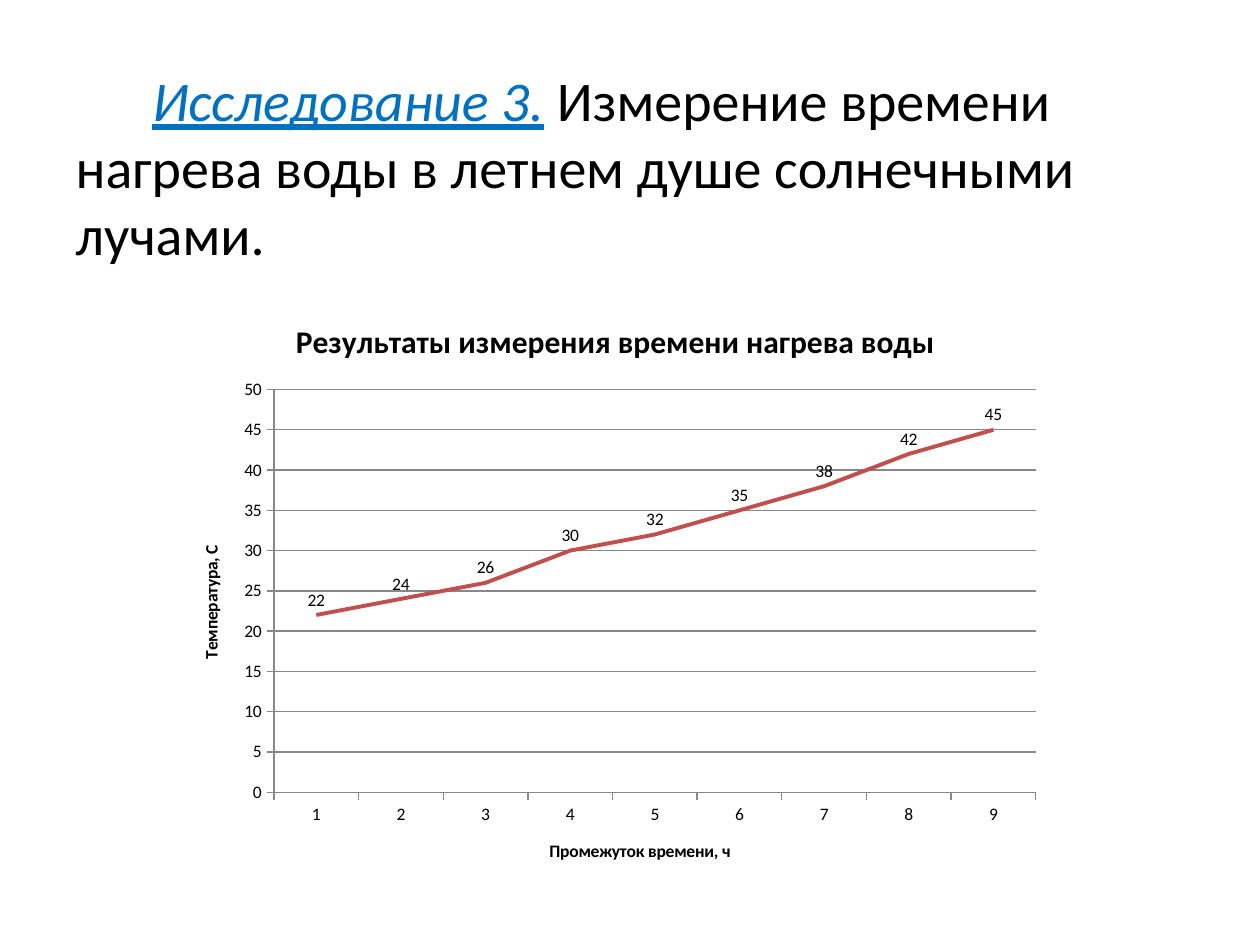
from dataclasses import dataclass

from lxml import etree
from pptx import Presentation
from pptx.chart.data import CategoryChartData
from pptx.dml.color import RGBColor
from pptx.enum.chart import XL_CHART_TYPE, XL_LABEL_POSITION, XL_MARKER_STYLE, XL_TICK_MARK
from pptx.oxml.ns import qn
from pptx.util import Inches, Pt

LINE_CHART = XL_CHART_TYPE.LINE
LABEL_ABOVE = XL_LABEL_POSITION.ABOVE
NO_MARKER = XL_MARKER_STYLE.NONE
TICK_OUTSIDE = XL_TICK_MARK.OUTSIDE

FONT = "Calibri"
BLACK = "000000"
BLUE = "0070C0"
RED = "C0504D"
GRAY = "878787"

TEMPERATURES = (22, 24, 26, 30, 32, 35, 38, 42, 45)
PLOT_AREA = {"x": 0.11, "y": 0.16, "w": 0.87, "h": 0.68}


@dataclass
class TextRun:
    text: str
    color: str = BLACK
    emphasized: bool = False


STATEMENT = (
    TextRun("Исследование 3.", BLUE, emphasized=True),
    TextRun(" Измерение времени нагрева воды в летнем душе солнечными лучами."),
)


def rgb(color: str) -> RGBColor:
    return RGBColor.from_string(color)


def format_font(font, size: float, color: str = BLACK, bold: bool = False) -> None:
    font.name = FONT
    font.size = Pt(size)
    font.bold = bold
    font.color.rgb = rgb(color)


def write_statement(placeholder) -> None:
    placeholder.left, placeholder.top = Inches(0.5), Inches(0.47)
    placeholder.width, placeholder.height = Inches(9), Inches(6.23)
    paragraph = placeholder.text_frame.paragraphs[0]
    properties = paragraph._p.get_or_add_pPr()
    properties.set("marL", "0")
    properties.set("indent", str(Inches(0.61)))
    etree.SubElement(properties, qn("a:buNone"))
    for item in STATEMENT:
        run = paragraph.add_run()
        run.text = item.text
        format_font(run.font, 32, item.color)
        run.font.italic = run.font.underline = item.emphasized


def set_title(owner, text: str, size: float) -> None:
    """Give a chart or an axis a bold title."""
    title = owner.chart_title if hasattr(owner, "chart_title") else owner.axis_title
    title.text_frame.text = text
    format_font(title.text_frame.paragraphs[0].runs[0].font, size, bold=True)


def format_axis(axis, title: str) -> None:
    set_title(axis, title, 10)
    axis.major_tick_mark = TICK_OUTSIDE
    axis.format.line.color.rgb = rgb(GRAY)
    axis.format.line.width = Pt(0.75)


def place_plot_area(chart) -> None:
    """Fix the inner plot area as fractions of the chart."""
    plot_area = chart._chartSpace.chart.plotArea
    for layout in plot_area.findall(qn("c:layout")):
        plot_area.remove(layout)
    layout = etree.Element(qn("c:layout"))
    plot_area.insert(0, layout)
    manual = etree.SubElement(layout, qn("c:manualLayout"))
    settings = {"layoutTarget": "inner", "xMode": "edge", "yMode": "edge", **PLOT_AREA}
    for name, value in settings.items():
        etree.SubElement(manual, qn(f"c:{name}")).set("val", str(value))


def add_temperature_chart(slide) -> None:
    data = CategoryChartData()
    data.categories = [str(hour) for hour in range(1, len(TEMPERATURES) + 1)]
    data.add_series("Series 1", TEMPERATURES)
    chart = slide.shapes.add_chart(
        LINE_CHART, Inches(1.41), Inches(2.34), Inches(6.95), Inches(4.7), data
    ).chart
    format_font(chart.font, 10)
    chart.has_legend = False
    set_title(chart, "Результаты измерения времени нагрева воды", 18)
    place_plot_area(chart)

    format_axis(chart.category_axis, "Промежуток времени, ч")
    value_axis = chart.value_axis
    format_axis(value_axis, "Температура, С")
    value_axis.minimum_scale, value_axis.maximum_scale = 0, 50
    value_axis.major_unit = 5
    value_axis.major_gridlines.format.line.color.rgb = rgb(GRAY)
    value_axis.major_gridlines.format.line.width = Pt(0.75)

    plot = chart.plots[0]
    plot.vary_by_categories = False
    series = plot.series[0]
    series.smooth = False
    series.marker.style = NO_MARKER
    series.format.line.color.rgb = rgb(RED)
    series.format.line.width = Pt(2.25)
    labels = series.data_labels
    labels.show_value = True
    labels.position = LABEL_ABOVE
    format_font(labels.font, 10)


def main() -> None:
    presentation = Presentation()
    presentation.slide_width, presentation.slide_height = Inches(10), Inches(7.5)
    slide = presentation.slides.add_slide(presentation.slide_layouts[1])
    title, body = slide.placeholders
    title.element.getparent().remove(title.element)
    write_statement(body)
    add_temperature_chart(slide)
    presentation.save("out.pptx")


if __name__ == "__main__":
    main()
